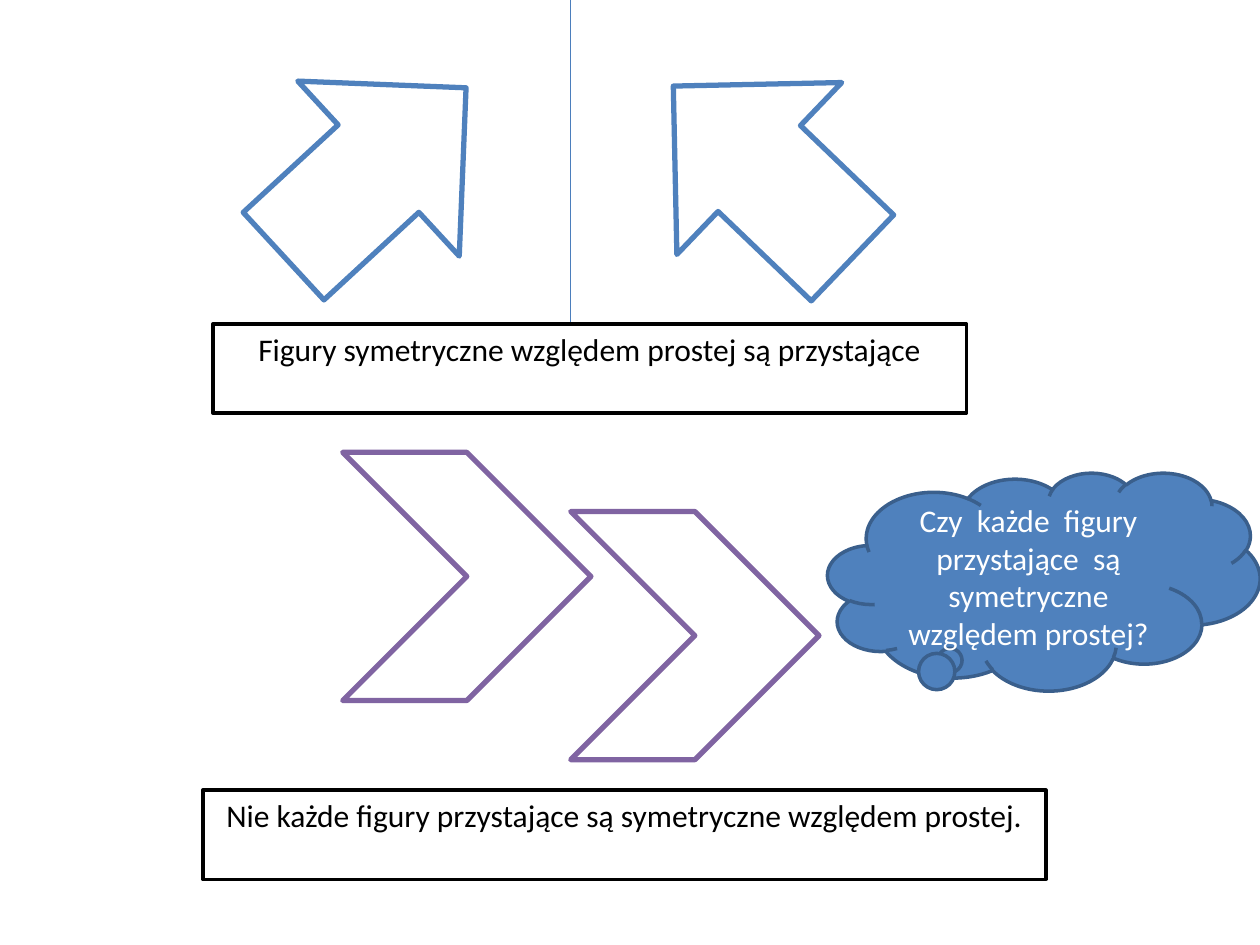
from dataclasses import dataclass

from lxml import etree
from pptx import Presentation
from pptx import util as u
from pptx.dml.color import RGBColor
from pptx.enum import shapes, text
from pptx.oxml.ns import qn

BLACK = RGBColor(0x00, 0x00, 0x00)
WHITE = RGBColor(0xFF, 0xFF, 0xFF)
BLUE = RGBColor(0x4F, 0x81, 0xBD)
DARK_BLUE = RGBColor(0x3A, 0x5F, 0x8C)
AXIS_BLUE = RGBColor(0x4B, 0x7E, 0xBC)
PURPLE = RGBColor(0x80, 0x64, 0xA2)

# Grid of 100 columns by 75 rows on a 10 x 7.5 inch slide
COLUMNS, ROWS = 100, 75
CELL = u.Inches(0.1)
AXIS_COLUMN = 45.3
KIND = shapes.MSO_SHAPE
ANCHOR = text.MSO_ANCHOR


def cells(count: float) -> int:
    return round(count * CELL)


@dataclass(frozen=True)
class Figure:
    kind: int
    column: float
    row: float
    width: float
    height: float
    outline: RGBColor
    weight: float
    fill: RGBColor = WHITE
    rotation: float = 0
    adjustments: tuple[float, ...] = ()
    wording: str = ""
    ink: RGBColor = BLACK
    anchor: int = ANCHOR.TOP


def arrow(column: float, rotation: float) -> Figure:
    return Figure(KIND.RIGHT_ARROW, column, 4.2, 19.7, 18.9, BLUE, 3, rotation=rotation)


def chevron(column: float, row: float) -> Figure:
    return Figure(KIND.CHEVRON, column, row, 19.7, 19.7, PURPLE, 3)


def statement(column: float, row: float, width: float, wording: str) -> Figure:
    return Figure(KIND.RECTANGLE, column, row, width, 7.1, BLACK, 2, wording=wording)


FIGURES = (
    # Mirrored arrows and their rule
    arrow(19.9, 317.3),
    arrow(50.7, 223.8),
    statement(16.9, 25.7, 59.8, "Figury symetryczne względem prostej są przystające"),
    # Shifted chevrons, the question and its answer
    chevron(27.2, 35.9),
    chevron(AXIS_COLUMN, 40.6),
    Figure(KIND.CLOUD_CALLOUT, 65.7, 37.5, 34.3, 17.3, DARK_BLUE, 2, fill=BLUE,
           adjustments=(-0.208, 0.347), ink=WHITE, anchor=ANCHOR.MIDDLE,
           wording="Czy  każde  figury przystające  są symetryczne względem prostej?"),
    statement(16.1, 62.7, 66.9,
              "Nie każde figury przystające są symetryczne względem prostej."),
)


def draw_axis(slide) -> None:
    axis = slide.shapes.add_connector(
        shapes.MSO_CONNECTOR.STRAIGHT,
        cells(AXIS_COLUMN), 0, cells(AXIS_COLUMN), cells(32))
    axis.line.color.rgb = AXIS_BLUE
    axis.line.width = u.Pt(0.75)
    etree.SubElement(axis.element.spPr, qn("a:effectLst"))


def write(frame, figure: Figure) -> None:
    frame.word_wrap = True
    frame.vertical_anchor = figure.anchor
    paragraph = frame.paragraphs[0]
    paragraph.alignment = text.PP_ALIGN.CENTER
    run = paragraph.add_run()
    run.text = figure.wording
    for name, value in {"name": "Calibri", "size": u.Pt(18)}.items():
        setattr(run.font, name, value)
    run.font.color.rgb = figure.ink


def draw_figure(slide, figure: Figure) -> None:
    bounds = (figure.column, figure.row, figure.width, figure.height)
    drawn = slide.shapes.add_shape(figure.kind, *map(cells, bounds))
    drawn.shadow.inherit = False
    drawn.rotation = figure.rotation
    for index, value in enumerate(figure.adjustments):
        drawn.adjustments[index] = value
    drawn.fill.solid()
    drawn.fill.fore_color.rgb = figure.fill
    drawn.line.color.rgb = figure.outline
    drawn.line.width = u.Pt(figure.weight)
    if figure.wording:
        write(drawn.text_frame, figure)


def main() -> None:
    deck = Presentation()
    deck.slide_width, deck.slide_height = cells(COLUMNS), cells(ROWS)
    slide = deck.slides.add_slide(deck.slide_layouts[6])
    draw_axis(slide)
    for figure in FIGURES:
        draw_figure(slide, figure)
    deck.save("out.pptx")


if __name__ == "__main__":
    main()
